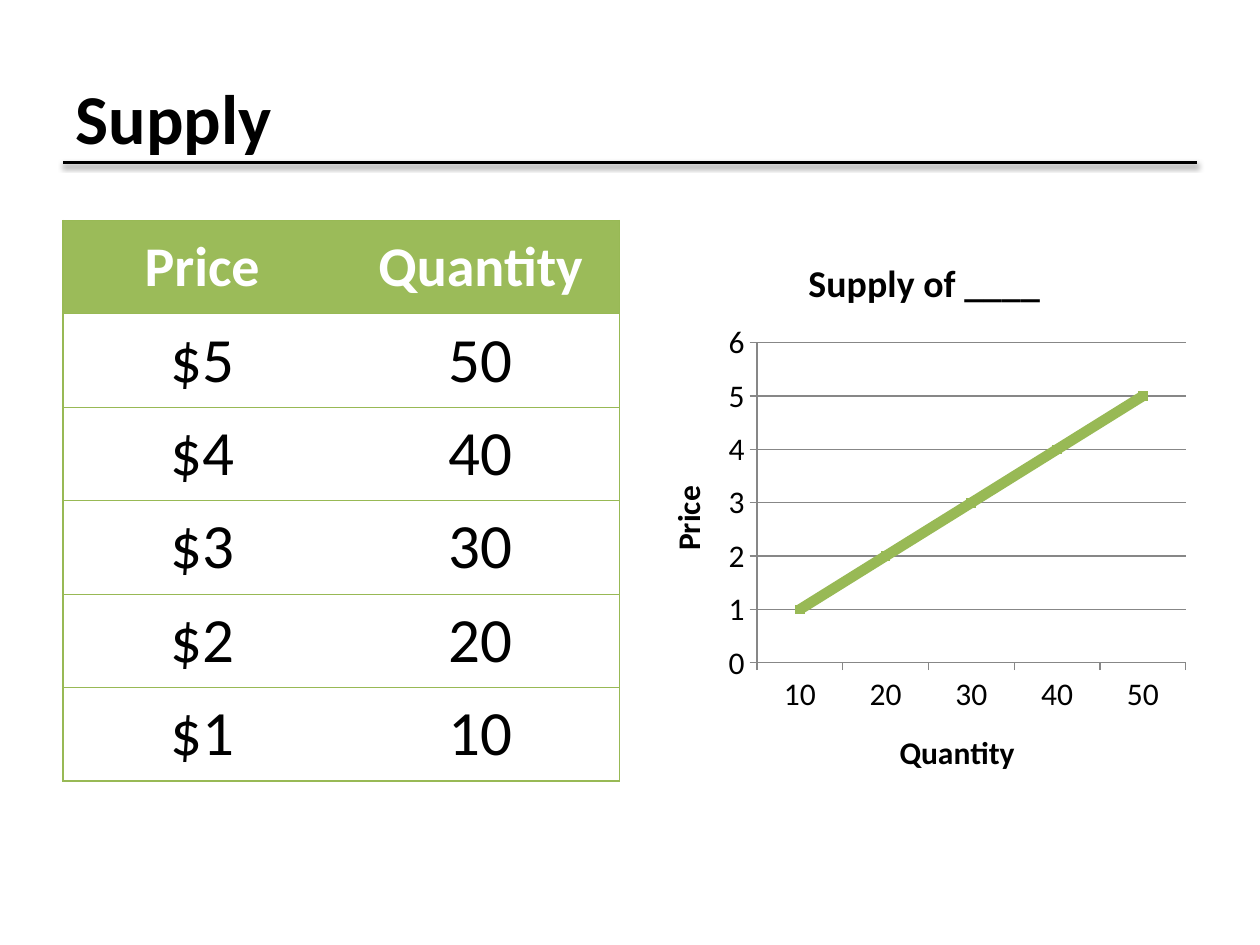
from lxml import etree
from pptx import Presentation
from pptx.chart import data
from pptx.dml.color import RGBColor
from pptx.enum import chart as ch, text
from pptx.oxml import parse_xml
from pptx.oxml.ns import nsdecls, qn
from pptx.util import Inches, Pt

INK, WHITE, HEAD, GREEN, GRAY = "000000", "FFFFFF", "9BBB59", "98B955", "878787"


def rgb(code):
    return RGBColor.from_string(code)


class Deck:
    face = "Calibri"

    def __init__(self):
        self.prs = Presentation()
        self.prs.slide_width, self.prs.slide_height = Inches(10), Inches(7.5)
        self.slide = self.prs.slides.add_slide(self.prs.slide_layouts[5])

    def style(self, font, size, code=INK, bold=False):
        for key, val in {"name": self.face, "size": Pt(size), "bold": bold}.items():
            setattr(font, key, val)
        font.color.rgb = rgb(code)

    def title(self, words, box):
        shape = self.slide.shapes.title
        for key, val in zip(("left", "top", "width", "height"), box):
            setattr(shape, key, Inches(val))
        frame = shape.text_frame
        frame.text = words
        frame.vertical_anchor = text.MSO_ANCHOR.MIDDLE
        para = frame.paragraphs[0]
        para.alignment = text.PP_ALIGN.LEFT
        self.style(para.runs[0].font, 40, bold=True)

    def rule(self, left, right, top):
        line = self.slide.shapes.add_connector(
            1, Inches(left), Inches(top), Inches(right), Inches(top))
        line.line.color.rgb, line.line.width = rgb(INK), Pt(2)
        line._element.spPr.append(parse_xml(
            f'<a:effectLst {nsdecls("a")}><a:outerShdw blurRad="{Pt(3.1)}" '
            f'dist="{Pt(1.6)}" dir="5400000" rotWithShape="0"><a:srgbClr val="{INK}">'
            '<a:alpha val="38000"/></a:srgbClr></a:outerShdw></a:effectLst>'))

    def edge(self, cell, side, code):
        fill = (f'<a:solidFill><a:srgbClr val="{code}"/></a:solidFill>'
                if code else "<a:noFill/>")
        cell._tc.get_or_add_tcPr().append(parse_xml(
            f'<a:ln{side} {nsdecls("a")} w="{Pt(0.75)}">{fill}</a:ln{side}>'))

    def table(self, rows, box):
        grid = self.slide.shapes.add_table(
            len(rows), len(rows[0]), *map(Inches, box)).table
        grid.horz_banding = False
        last = len(rows[0]) - 1
        for r, row in enumerate(rows):
            for c, words in enumerate(row):
                cell = grid.cell(r, c)
                # Green outline and row lines, nothing between the columns
                lines = {"L": c == 0, "R": c == last, "T": True, "B": True}
                for side, shown in lines.items():
                    self.edge(cell, side, GREEN if shown else None)
                cell.text = words
                cell.vertical_anchor = text.MSO_ANCHOR.MIDDLE
                para = cell.text_frame.paragraphs[0]
                para.alignment = text.PP_ALIGN.CENTER
                if r == 0:
                    cell.fill.solid()
                    cell.fill.fore_color.rgb = rgb(HEAD)
                    self.style(para.runs[0].font, 32, WHITE, True)
                else:
                    cell.fill.background()
                    self.style(para.runs[0].font, 36)

    def place(self, node, spot, inner=False):
        """Put a chart part at fractions of the chart area."""
        for old in node.findall(qn("c:layout")):
            node.remove(old)
        tags = [("layoutTarget", "inner")] if inner else []
        tags += [("xMode", "edge"), ("yMode", "edge"), *zip("xywh", spot)]
        lay = etree.Element(qn("c:layout"))
        part = etree.SubElement(lay, qn("c:manualLayout"))
        for tag, val in tags:
            etree.SubElement(part, qn(f"c:{tag}")).set("val", str(val))
        if inner:
            node.insert(0, lay)
        else:
            node.find(qn("c:tx")).addnext(lay)

    def label(self, owner, words, size):
        frame = (owner.chart_title if hasattr(owner, "chart_title")
                 else owner.axis_title).text_frame
        frame.text = words
        self.style(frame.paragraphs[0].runs[0].font, size, bold=True)

    def chart(self, name, cats, vals, box):
        info = data.CategoryChartData()
        info.categories = cats
        info.add_series("Series 1", vals)
        plot = self.slide.shapes.add_chart(
            ch.XL_CHART_TYPE.LINE_MARKERS, *map(Inches, box), info).chart
        plot.has_legend = False
        self.style(plot.font, 18)
        self.label(plot, name, 21.6)
        self.place(plot.chart_title._element, (0.29, 0.05))
        self.place(plot._chartSpace.chart.plotArea, (0.21, 0.21, 0.77, 0.55), True)

        # Axes
        for axis, words in ((plot.category_axis, "Quantity"), (plot.value_axis, "Price")):
            self.label(axis, words, 18)
            axis.major_tick_mark = ch.XL_TICK_MARK.OUTSIDE
            axis.format.line.color.rgb = rgb(GRAY)
        scale = plot.value_axis
        for key, val in {"minimum_scale": 0, "maximum_scale": 6, "major_unit": 1}.items():
            setattr(scale, key, val)
        scale.major_gridlines.format.line.color.rgb = rgb(GRAY)

        # Supply line
        plot.plots[0].vary_by_categories = False
        line = plot.plots[0].series[0]
        line.smooth = False
        line.format.line.color.rgb, line.format.line.width = rgb(GREEN), Pt(6)
        mark = line.marker
        mark.style, mark.size = ch.XL_MARKER_STYLE.SQUARE, 5
        mark.format.fill.solid()
        mark.format.fill.fore_color.rgb = rgb(GREEN)
        mark.format.line.color.rgb = rgb(GREEN)


def main():
    deck = Deck()
    prices = [5, 4, 3, 2, 1]
    amounts = [price * 10 for price in prices]

    # Heading
    deck.rule(0.5, 9.5, 1.29)
    deck.title("Supply", (0.5, 0.3, 9, 1.25))

    # Supply schedule and its curve
    rows = [("Price", "Quantity")]
    rows += [(f"${price}", str(count)) for price, count in zip(prices, amounts)]
    deck.table(rows, (0.5, 1.75, 4.42, 4.45))
    deck.chart("Supply of ____", [str(count) for count in reversed(amounts)],
               prices[::-1], (5.08, 1.75, 4.42, 4.62))
    deck.prs.save("out.pptx")


if __name__ == "__main__":
    main()
